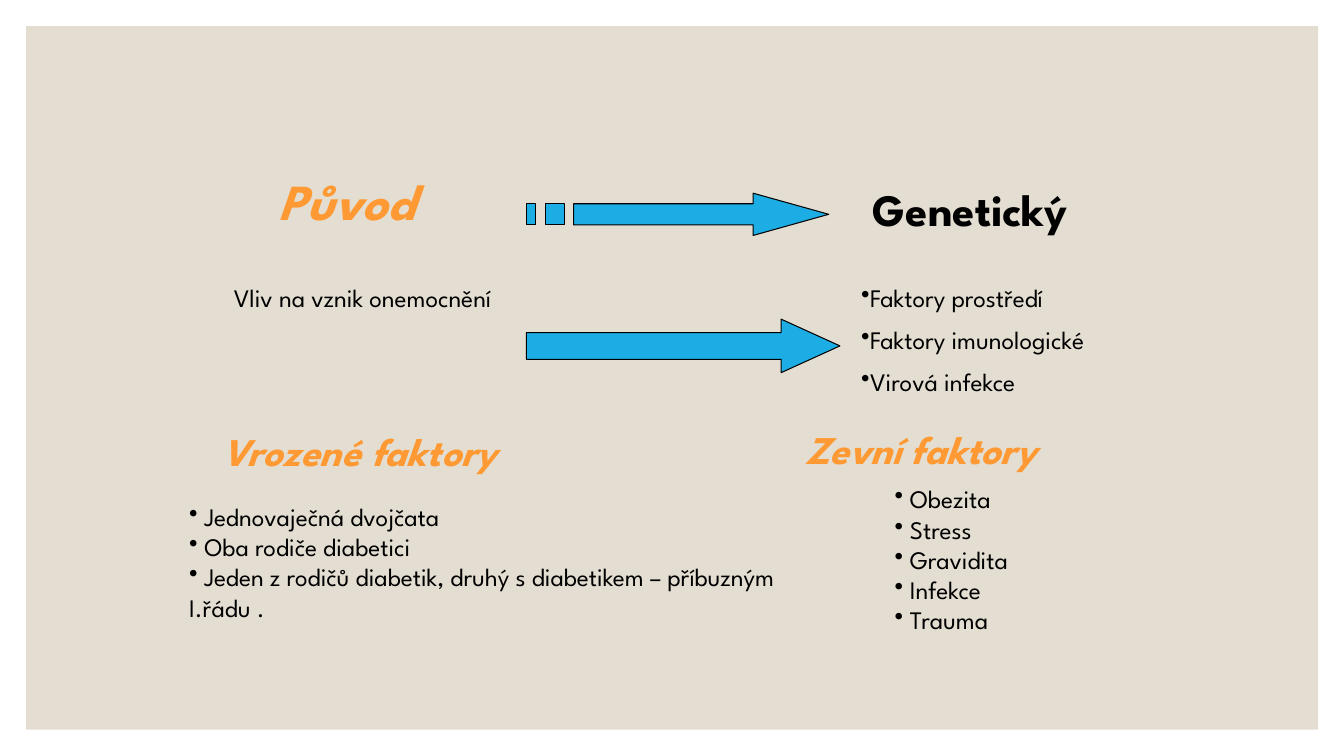
from dataclasses import dataclass

from lxml import etree
from pptx import Presentation
from pptx import util as u
from pptx.dml.color import RGBColor
from pptx.enum import shapes, text
from pptx.oxml import ns


@dataclass(frozen=True)
class Theme:
    font: str = "League Spartan"
    panel: RGBColor = RGBColor(0xE3, 0xDE, 0xD1)
    accent: RGBColor = RGBColor(0xFF, 0x99, 0x33)
    arrow: RGBColor = RGBColor(0x1C, 0xAD, 0xE4)
    ink: RGBColor = RGBColor(0, 0, 0)
    origin_size: int = 36
    genetic_size: int = 32
    heading_size: int = 28
    body_size: int = 18
    outline: float = 0.75


THEME = Theme()


def add_bullet(paragraph):
    properties = paragraph._p.get_or_add_pPr()
    properties.set("marL", "0")
    properties.set("indent", "0")
    etree.SubElement(properties, ns.qn("a:buFontTx"))
    etree.SubElement(properties, ns.qn("a:buChar")).set("char", "•")


def add_text(slide, box, lines, size=THEME.body_size, color=THEME.ink,
             bold=False, italic=False, bullet=False, wrap=False):
    shape = slide.shapes.add_textbox(*map(u.Pt, box))
    frame = shape.text_frame
    frame.text = "\n".join(lines)
    frame.word_wrap = wrap
    frame.auto_size = text.MSO_AUTO_SIZE.SHAPE_TO_FIT_TEXT
    for paragraph in frame.paragraphs:
        if bullet:
            add_bullet(paragraph)
        for run in paragraph.runs:
            run.font.name = THEME.font
            run.font.size = u.Pt(size)
            run.font.bold = bold
            run.font.italic = italic
            run.font.color.rgb = color


def add_heading(slide, box, title, size=THEME.heading_size, wrap=False):
    add_text(slide, box, [title], size, THEME.accent, bold=True, italic=True, wrap=wrap)


def style_arrow(shape):
    shape.shadow.inherit = False
    shape.fill.solid()
    shape.fill.fore_color.rgb = THEME.arrow
    shape.line.color.rgb = THEME.ink
    shape.line.width = u.Pt(THEME.outline)


def add_solid_arrow(slide, box):
    shape = slide.shapes.add_shape(shapes.MSO_SHAPE.RIGHT_ARROW, *map(u.Pt, box))
    shape.adjustments[0] = 0.5
    shape.adjustments[1] = 1.098
    style_arrow(shape)


def add_striped_arrow(slide, box):
    """Arrow with two detached stripes, laid out in sixteenths and thirty-seconds of its width."""
    left, top, width, height = box
    upper, lower, middle = height / 4, height * 3 / 4, height / 2
    neck = width * 3 / 4
    body = width * 5 / 32
    outlines = [
        [(neck, 0), (neck, upper), (body, upper), (body, lower),
         (neck, lower), (neck, height), (width, middle)],
    ]
    for start, end in ((width / 16, width / 8), (0, width / 32)):
        outlines.append([(start, upper), (start, lower), (end, lower), (end, upper)])

    builder = None
    for outline in outlines:
        first, *others = [(u.Pt(x), u.Pt(y)) for x, y in outline]
        if builder is None:
            builder = slide.shapes.build_freeform(*first)
        else:
            builder.move_to(*first)
        builder.add_line_segments(others, close=True)
    style_arrow(builder.convert_to_shape(u.Pt(left), u.Pt(top)))


def add_panel(slide, box):
    shape = slide.shapes.add_shape(shapes.MSO_SHAPE.RECTANGLE, *map(u.Pt, box))
    shape.shadow.inherit = False
    shape.fill.solid()
    shape.fill.fore_color.rgb = THEME.panel
    shape.line.fill.background()


def add_origin(slide, box):
    """Origin and influence on the left, arrows, and what they lead to on the right."""
    left, top = box
    add_text(slide, (left + 456.5, top + 8, 168.5, 46), ["Genetický"],
             THEME.genetic_size, bold=True)
    add_heading(slide, (left + 32.2, top, 125.3, 51), "Původ", THEME.origin_size)
    add_text(slide, (left, top + 80, 217.5, 51), ["Vliv na vznik onemocnění"], wrap=True)
    factors = (("Faktory prostředí", 163.5), ("Faktory imunologické", 192.2),
               ("Virová infekce", 134.6))
    for row, (factor, width) in enumerate(factors):
        add_text(slide, (left + 448, top + 80 + row * 30, width, 29), [factor], bullet=True)
    add_solid_arrow(slide, (left + 216, top + 110, 224, 38.2))
    add_striped_arrow(slide, (left + 216, top + 20, 216, 30.2))


def add_inborn_factors(slide, box):
    left, top = box
    add_heading(slide, (left + 24, top, 226.8, 41), "Vrozené faktory")
    add_text(slide, (left, top + 52.5, 456, 94.5),
             [" Jednovaječná dvojčata", " Oba rodiče diabetici",
              " Jeden z rodičů diabetik, druhý s diabetikem – příbuzným I.řádu ."],
             bullet=True, wrap=True)


def add_external_factors(slide, box):
    left, top = box
    add_heading(slide, (left, top, 344, 41), "Zevní faktory", wrap=True)
    add_text(slide, (left + 64, top + 42, 103.7, 116.5),
             [" Obezita", " Stress", " Gravidita", " Infekce", " Trauma"], bullet=True)


def main():
    presentation = Presentation()
    presentation.slide_width = u.Pt(960)
    presentation.slide_height = u.Pt(540)
    slide = presentation.slides.add_slide(presentation.slide_layouts[6])
    add_panel(slide, (18.6, 18.6, 923, 502.6))
    add_origin(slide, (160, 118))
    add_inborn_factors(slide, (128, 302))
    add_external_factors(slide, (568, 300))
    presentation.save("out.pptx")


if __name__ == "__main__":
    main()
